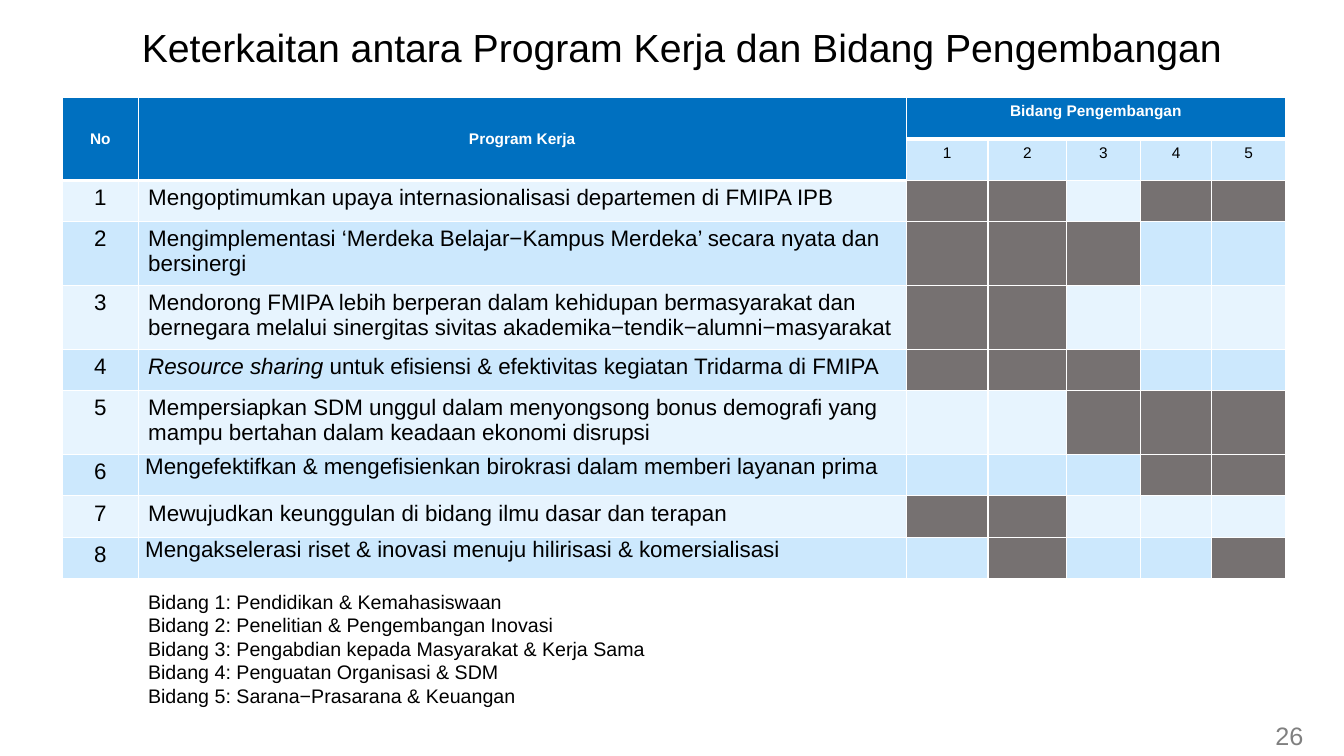
from dataclasses import dataclass

from lxml import etree
from pptx import Presentation
from pptx.dml.color import RGBColor
from pptx.enum.text import MSO_ANCHOR, MSO_AUTO_SIZE, PP_ALIGN
from pptx.oxml.ns import qn
from pptx.util import Inches, Pt

CENTER, LEFT = PP_ALIGN.CENTER, PP_ALIGN.LEFT
TOP, MIDDLE = MSO_ANCHOR.TOP, MSO_ANCHOR.MIDDLE
FIT = MSO_AUTO_SIZE.SHAPE_TO_FIT_TEXT


@dataclass(frozen=True)
class Theme:
    face: str = "Arial"
    black: str = "000000"
    white: str = "FFFFFF"
    gray: str = "808080"
    head: str = "0070C0"
    mark: str = "767171"
    bands: tuple = ("CCE8FD", "E7F4FE")
    title: int = 28
    page: int = 18
    body: int = 16
    note: int = 14
    label: int = 11


THEME = Theme()
COLS = (0.75, 7.62, 0.81, 0.78, 0.73, 0.71, 0.73)
LOW, HIGH = 0.41, 0.63
WIDE = (0.1, 0.05)
TIGHT = (0.07, 0)
FIELDS = range(1, 6)

# Text runs, linked fields, row height, cell margins
WORKS = [
    (["Mengoptimumkan upaya internasionalisasi departemen di FMIPA IPB"],
     {1, 2, 4, 5}, LOW, WIDE),
    (["Mengimplementasi ‘Merdeka Belajar−Kampus Merdeka’ secara nyata dan "
      "bersinergi"], {1, 2, 3}, HIGH, WIDE),
    (["Mendorong FMIPA lebih berperan dalam kehidupan bermasyarakat dan "
      "bernegara melalui sinergitas sivitas akademika−tendik−alumni−masyarakat"],
     {1, 2}, HIGH, WIDE),
    (["Resource sharing ", "untuk efisiensi & efektivitas kegiatan Tridarma di FMIPA"],
     {1, 2, 3}, LOW, WIDE),
    (["Mempersiapkan SDM unggul dalam menyongsong bonus demografi yang "
      "mampu bertahan dalam keadaan ekonomi disrupsi"], {3, 4, 5}, HIGH, WIDE),
    (["Mengefektifkan & mengefisienkan birokrasi dalam memberi layanan prima"],
     {4, 5}, LOW, TIGHT),
    (["Mewujudkan keunggulan di bidang ilmu dasar dan terapan"],
     {1, 2}, LOW, WIDE),
    (["Mengakselerasi riset & inovasi menuju hilirisasi & komersialisasi"],
     {2, 5}, LOW, TIGHT),
]
NOTES = [
    "Pendidikan & Kemahasiswaan",
    "Penelitian & Pengembangan Inovasi",
    "Pengabdian kepada Masyarakat & Kerja Sama",
    "Penguatan Organisasi & SDM",
    "Sarana−Prasarana & Keuangan",
]


def apply(item, **values):
    for name, value in values.items():
        setattr(item, name, value)


def style(font, size, color, **extra):
    apply(font, name=THEME.face, size=Pt(size), **extra)
    font.color.rgb = RGBColor.from_string(color)


def place(shape, left, top, width, height):
    apply(shape, left=Inches(left), top=Inches(top),
          width=Inches(width), height=Inches(height))


def write(frame, lines, size, color, align=LEFT):
    for i, line in enumerate(lines):
        para = frame.paragraphs[0] if i == 0 else frame.add_paragraph()
        para.alignment = align
        run = para.add_run()
        run.text = line
        style(run.font, size, color)


def add_title(slide, text):
    shape = slide.shapes.title
    place(shape, 0.87, 0.18, 11.78, 0.57)
    apply(shape.text_frame, word_wrap=True, auto_size=FIT, vertical_anchor=TOP)
    write(shape.text_frame, [text], THEME.title, THEME.black, CENTER)


def add_text(slide, box, lines, size, color, wrap):
    frame = slide.shapes.add_textbox(*map(Inches, box)).text_frame
    apply(frame, word_wrap=wrap, auto_size=FIT)
    write(frame, lines, size, color)


def edge(cell, base):
    props = cell._tc.get_or_add_tcPr()
    for side in "LRTB":
        width = base if side == "B" else 1
        line = etree.SubElement(props, qn(f"a:ln{side}"), w=str(Pt(width)))
        fill = etree.SubElement(line, qn("a:solidFill"))
        etree.SubElement(fill, qn("a:srgbClr"), val=THEME.white)


def fill_cell(cell, fill, runs=(), size=THEME.label, color=THEME.black,
              align=CENTER, anchor=TOP, inset=WIDE, bold=False, base=1):
    side, rise = map(Inches, inset)
    apply(cell, margin_left=side, margin_right=side, margin_top=rise,
          margin_bottom=rise, vertical_anchor=anchor)
    edge(cell, base)
    cell.fill.solid()
    cell.fill.fore_color.rgb = RGBColor.from_string(fill)
    para = cell.text_frame.paragraphs[0]
    para.alignment = align
    style(para.font, size, color)
    for i, text in enumerate(runs):
        run = para.add_run()
        run.text = text
        # The first of several runs is a foreign term
        style(run.font, size, color, bold=bold,
              italic=len(runs) > 1 and i == 0)
    return para


def add_head(table):
    heads = {0: ("No", MIDDLE), 1: ("Program Kerja", MIDDLE),
             2: ("Bidang Pengembangan", TOP)}
    for col in range(len(COLS)):
        text, anchor = heads.get(col, ("", TOP))
        fill_cell(table.cell(0, col), THEME.head, [text] if text else [],
                  color=THEME.white, anchor=anchor, bold=True, base=3)
    for col in (0, 1):
        fill_cell(table.cell(1, col), THEME.head)
        table.cell(0, col).merge(table.cell(1, col))
    table.cell(0, 2).merge(table.cell(0, len(COLS) - 1))
    for num in FIELDS:
        fill_cell(table.cell(1, num + 1), THEME.bands[0], [str(num)])


def add_work(table, num, work):
    runs, links, _, inset = work
    row = num + 1
    band = THEME.bands[num % 2]
    fill_cell(table.cell(row, 0), band, [str(num)], THEME.body)
    para = fill_cell(table.cell(row, 1), band, runs, THEME.body,
                     align=LEFT, inset=inset)
    if inset == TIGHT:
        para.space_after = Pt(6)
    for field in FIELDS:
        fill_cell(table.cell(row, field + 1),
                  THEME.mark if field in links else band)


def add_matrix(slide):
    heights = [LOW, LOW] + [work[2] for work in WORKS]
    box = map(Inches, (0.62, 0.97, sum(COLS), sum(heights)))
    table = slide.shapes.add_table(len(heights), len(COLS), *box).table
    for col, width in zip(table.columns, COLS):
        col.width = Inches(width)
    for row, height in zip(table.rows, heights):
        row.height = Inches(height)
    add_head(table)
    for num, work in enumerate(WORKS, 1):
        add_work(table, num, work)


def main():
    deck = Presentation()
    apply(deck, slide_width=Inches(13.33), slide_height=Inches(7.5))
    slide = deck.slides.add_slide(deck.slide_layouts[5])
    add_title(slide, "Keterkaitan antara Program Kerja dan Bidang Pengembangan")
    add_matrix(slide)
    # Legend and page number
    notes = [f"Bidang {num}: {note}" for num, note in enumerate(NOTES, 1)]
    add_text(slide, (1.37, 5.8, 5.15, 1.28), notes, THEME.note, THEME.black, False)
    add_text(slide, (12.55, 7.1, 0.55, 0.4), ["26"], THEME.page, THEME.gray, True)
    deck.save("out.pptx")


if __name__ == "__main__":
    main()
